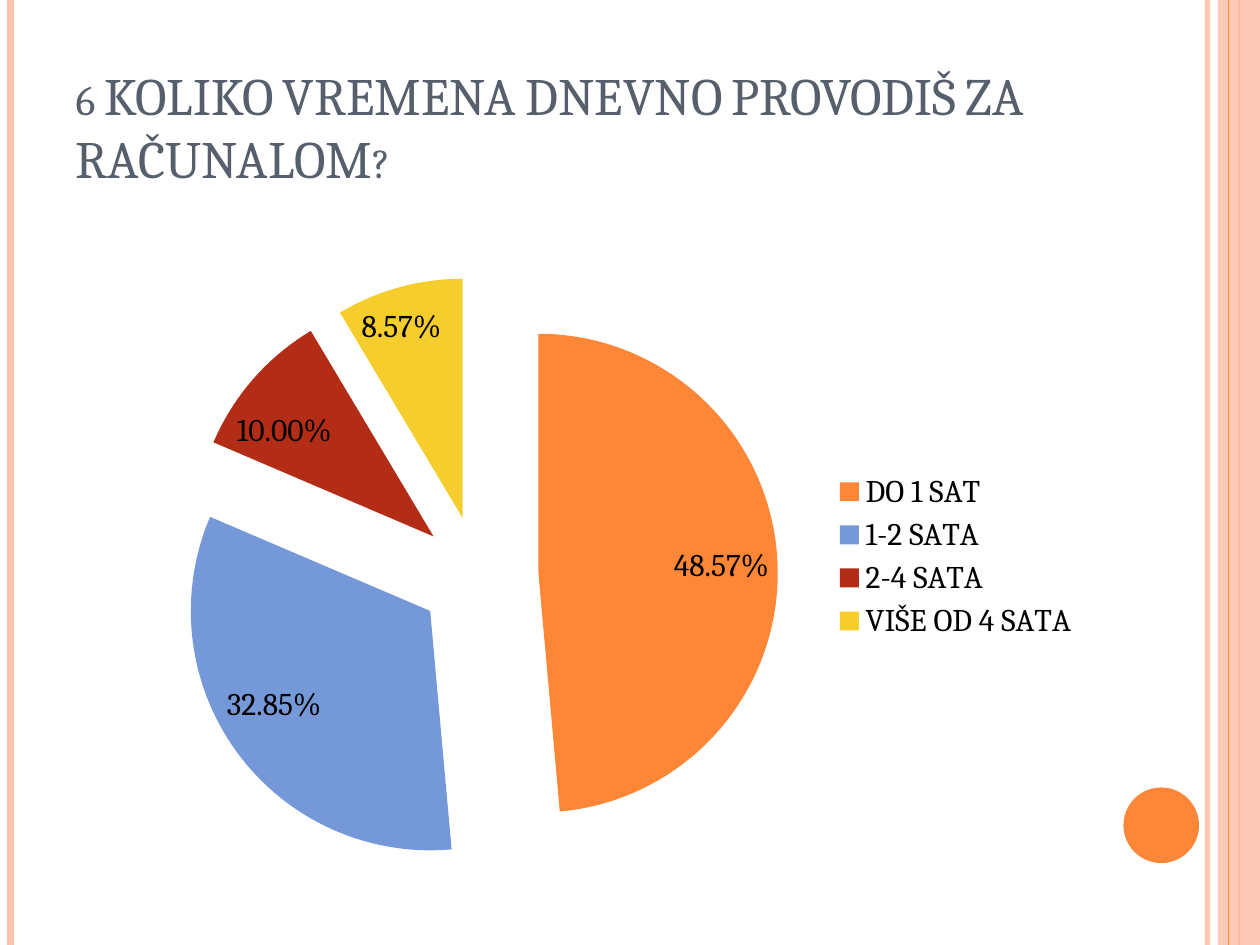
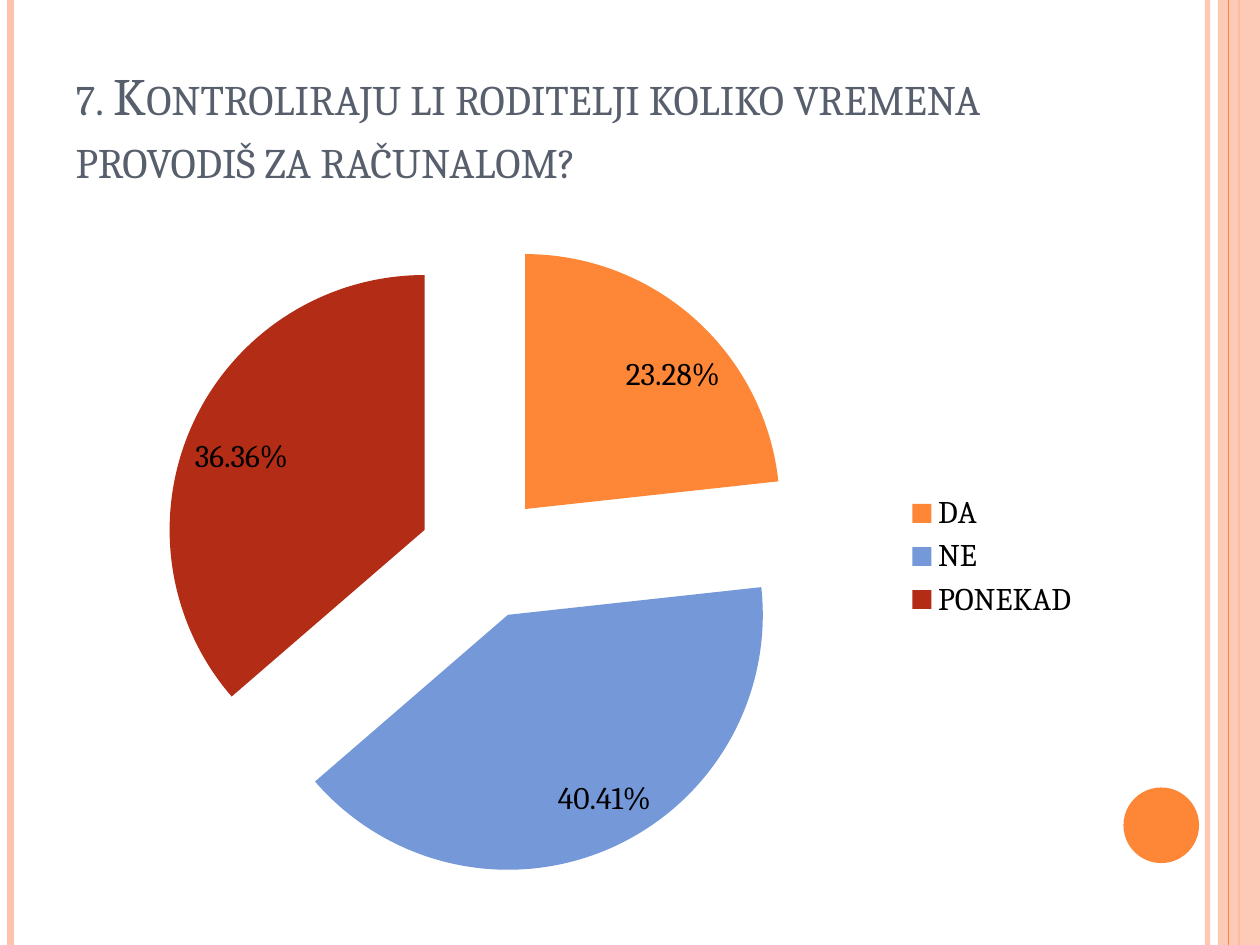
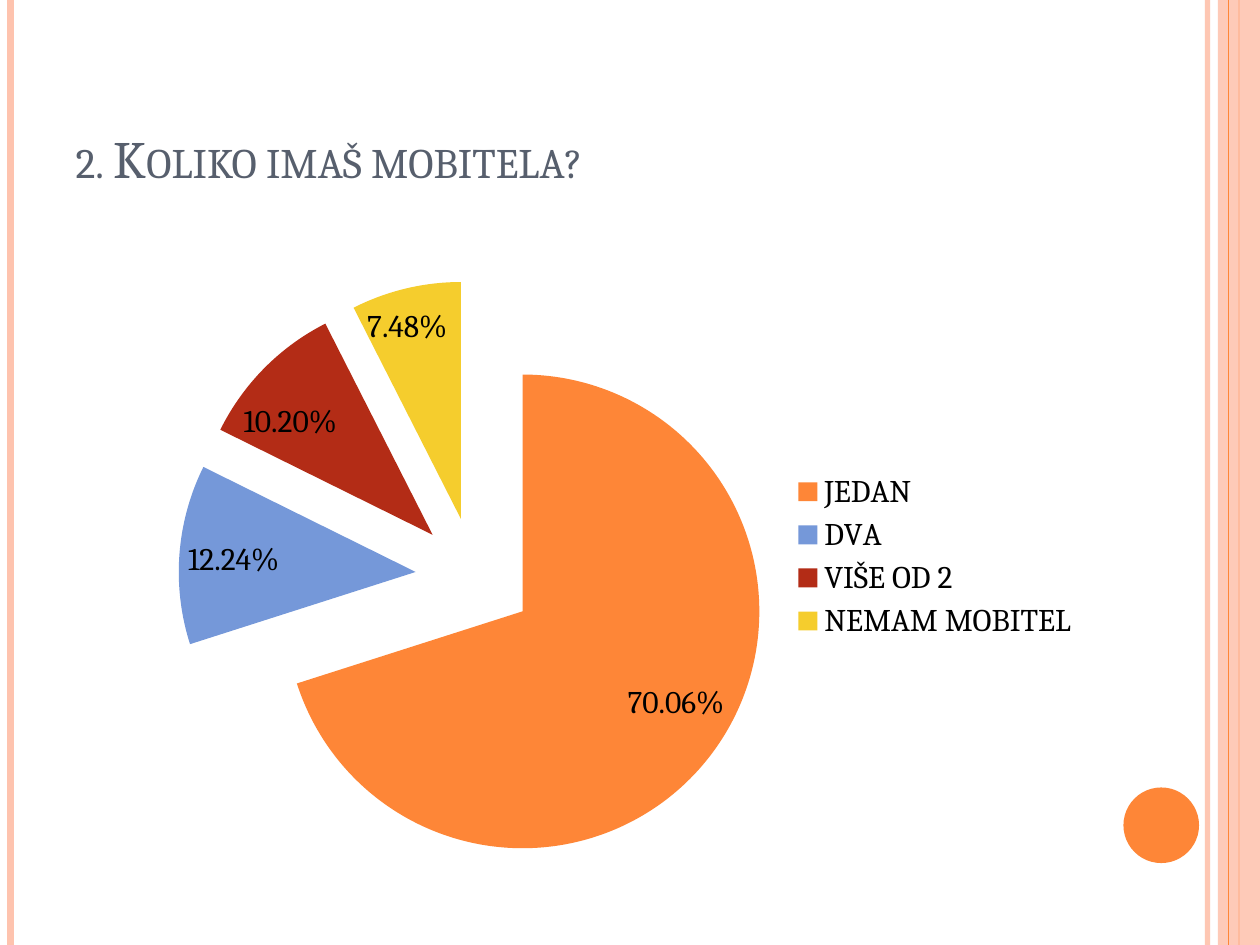
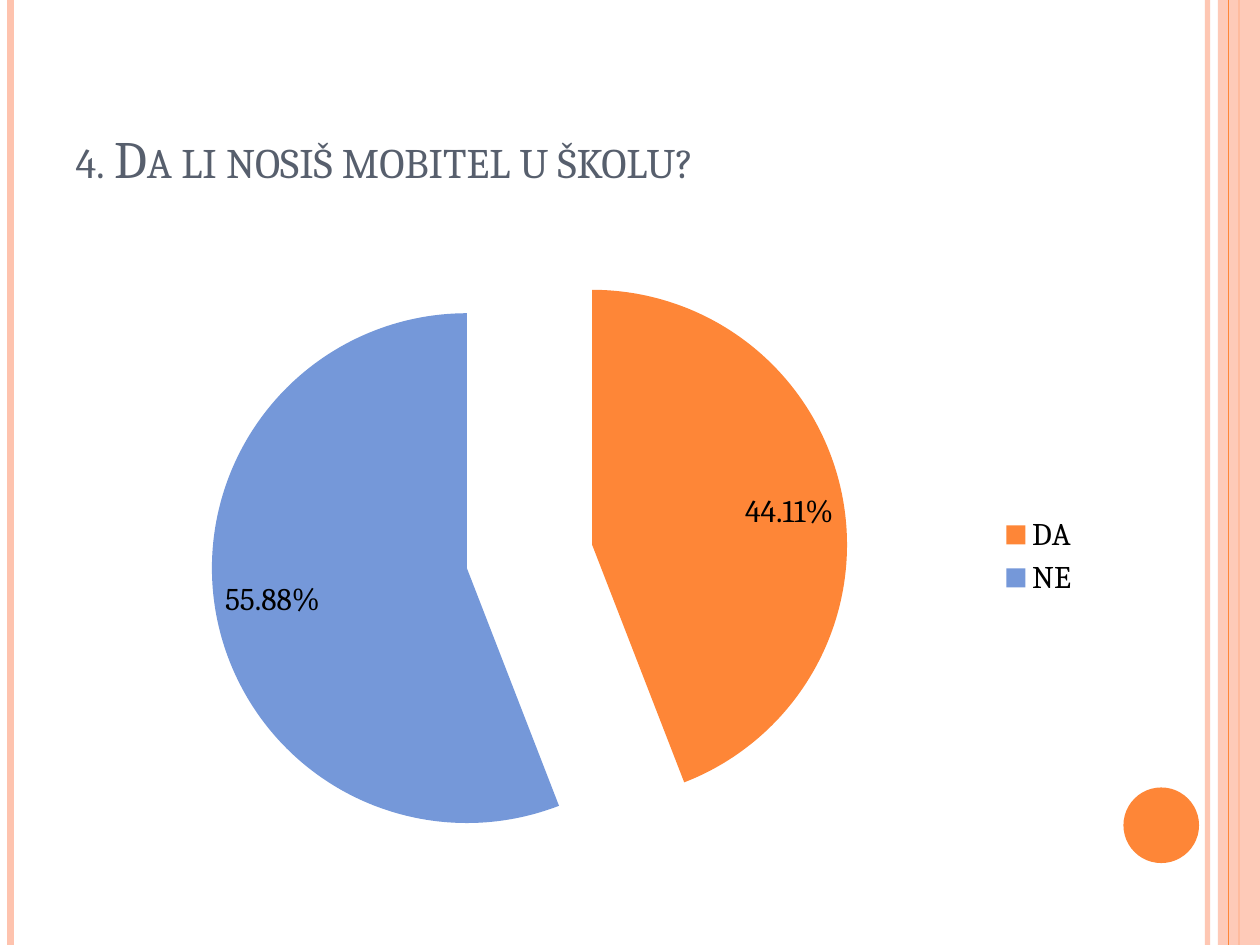
from pptx import Presentation
from pptx.chart.data import CategoryChartData
from pptx.dml.color import RGBColor
from pptx.enum.chart import XL_CHART_TYPE, XL_LABEL_POSITION, XL_LEGEND_POSITION
from pptx.enum.shapes import MSO_CONNECTOR, MSO_SHAPE
from pptx.enum.text import MSO_ANCHOR, MSO_AUTO_SIZE, PP_ALIGN
from pptx.oxml.ns import qn
from pptx.util import Pt
from lxml.etree import Element, SubElement

FONT = "Cambria"
TITLE_COLOR = "575F6D"
ORANGE = "FE8637"
PINK = "FEC3AE"
SLICE_COLORS = [ORANGE, "7598D9", "B32C16", "F5CD2D"]
SLIDE_WIDTH, SLIDE_HEIGHT = 720, 540
LEFT, CONTENT_WIDTH = 36, 588

# x, colour, width, opacity in percent
LINES_BEHIND_BAND = [(690, PINK, 3, 93), (6, PINK, 4.5, 100), (708, ORANGE, 1.5, 100)]
LINES_ON_BAND = [(702, ORANGE, 0.75, 100)]

QUESTIONS = [
    ("6 KOLIKO VREMENA DNEVNO PROVODIŠ ZA RAČUNALOM?",
     {"DO 1 SAT": 0.4857, "1-2 SATA": 0.3285, "2-4 SATA": 0.1, "VIŠE OD 4 SATA": 0.0857}),
    ("7. Kontroliraju li roditelji koliko vremena provodiš za računalom?",
     {"DA": 0.2328, "NE": 0.4041, "PONEKAD": 0.3636}),
    ("2. Koliko imaš mobitela?",
     {"JEDAN": 0.7006, "DVA": 0.1224, "VIŠE OD 2": 0.102, "NEMAM MOBITEL": 0.0748}),
    ("4. Da li nosiš mobitel u školu?",
     {"DA": 0.4411, "NE": 0.5588}),
]


def paint(fill, color, opacity=100):
    """Make a fill solid in a hex colour, with an opacity in percent."""
    fill.solid()
    fill.fore_color.rgb = RGBColor.from_string(color)
    if opacity < 100:
        color_element = fill._xPr.find(qn("a:solidFill"))[0]
        SubElement(color_element, qn("a:alpha"), val=str(opacity * 1000))


def write(text_frame, text, size, color, small_caps=False, anchor=MSO_ANCHOR.TOP):
    text_frame.word_wrap = True
    text_frame.auto_size = MSO_AUTO_SIZE.NONE
    text_frame.vertical_anchor = anchor
    paragraph = text_frame.paragraphs[0]
    paragraph.alignment = PP_ALIGN.LEFT
    run = paragraph.add_run()
    run.text = text
    run.font.name = FONT
    run.font.size = Pt(size)
    paint(run.font.fill, color)
    if small_caps:
        run.font._element.set("cap", "small")


presentation = Presentation()
presentation.slide_width = Pt(SLIDE_WIDTH)
presentation.slide_height = Pt(SLIDE_HEIGHT)
title_only = presentation.slide_layouts[5]

for question, answers in QUESTIONS:
    slide = presentation.slides.add_slide(title_only)

    # Side lines, right band and disc
    for x, color, width, opacity in LINES_BEHIND_BAND + LINES_ON_BAND:
        line = slide.shapes.add_connector(
            MSO_CONNECTOR.STRAIGHT, Pt(x), Pt(0), Pt(x), Pt(SLIDE_HEIGHT))
        line.line.width = Pt(width)
        paint(line.line.fill, color, opacity)
        SubElement(line._element.spPr, qn("a:effectLst"))

    band = slide.shapes.add_shape(
        MSO_SHAPE.RECTANGLE, Pt(696), Pt(0), Pt(24), Pt(SLIDE_HEIGHT))
    paint(band.fill, PINK, 87)
    disc = slide.shapes.add_shape(MSO_SHAPE.OVAL, Pt(642), Pt(450), Pt(43.2), Pt(43.2))
    paint(disc.fill, ORANGE)
    for shape in (band, disc):
        shape.line.fill.background()
        shape.shadow.inherit = False
    line._element.addprevious(band._element)  # the last line lies on the band

    # Title
    title = slide.shapes.title
    title.left, title.top = Pt(LEFT), Pt(21.6)
    title.width, title.height = Pt(CONTENT_WIDTH), Pt(90)
    write(title.text_frame, question, size=30, color=TITLE_COLOR,
          small_caps=True, anchor=MSO_ANCHOR.BOTTOM)

    # Exploded pie of the answers
    chart_data = CategoryChartData(number_format="0.00%")
    chart_data.categories = list(answers)
    chart_data.add_series("Series 1", list(answers.values()))
    chart = slide.shapes.add_chart(
        XL_CHART_TYPE.PIE, Pt(LEFT), Pt(126), Pt(CONTENT_WIDTH), Pt(384), chart_data).chart
    chart.has_title = False
    chart.font.name = FONT
    chart.font.size = Pt(18)
    chart.font.color.rgb = RGBColor.from_string("000000")
    chart.has_legend = True
    chart.legend.position = XL_LEGEND_POSITION.RIGHT
    chart.legend.include_in_layout = False

    plot = chart.plots[0]
    plot.vary_by_categories = True
    plot.has_data_labels = True
    labels = plot.data_labels
    labels.show_value = True
    labels.show_percentage = False
    labels.number_format = "0.00%"
    labels.number_format_is_linked = False
    labels.position = XL_LABEL_POSITION.BEST_FIT  # keeps labels within narrow slices

    series = plot.series[0]
    for index, color in enumerate(SLICE_COLORS[:len(answers)]):
        paint(series.points[index].format.fill, color)
    explosion = Element(qn("c:explosion"), val="25")
    series._element.find(qn("c:dPt")).addprevious(explosion)

presentation.save("out.pptx")
